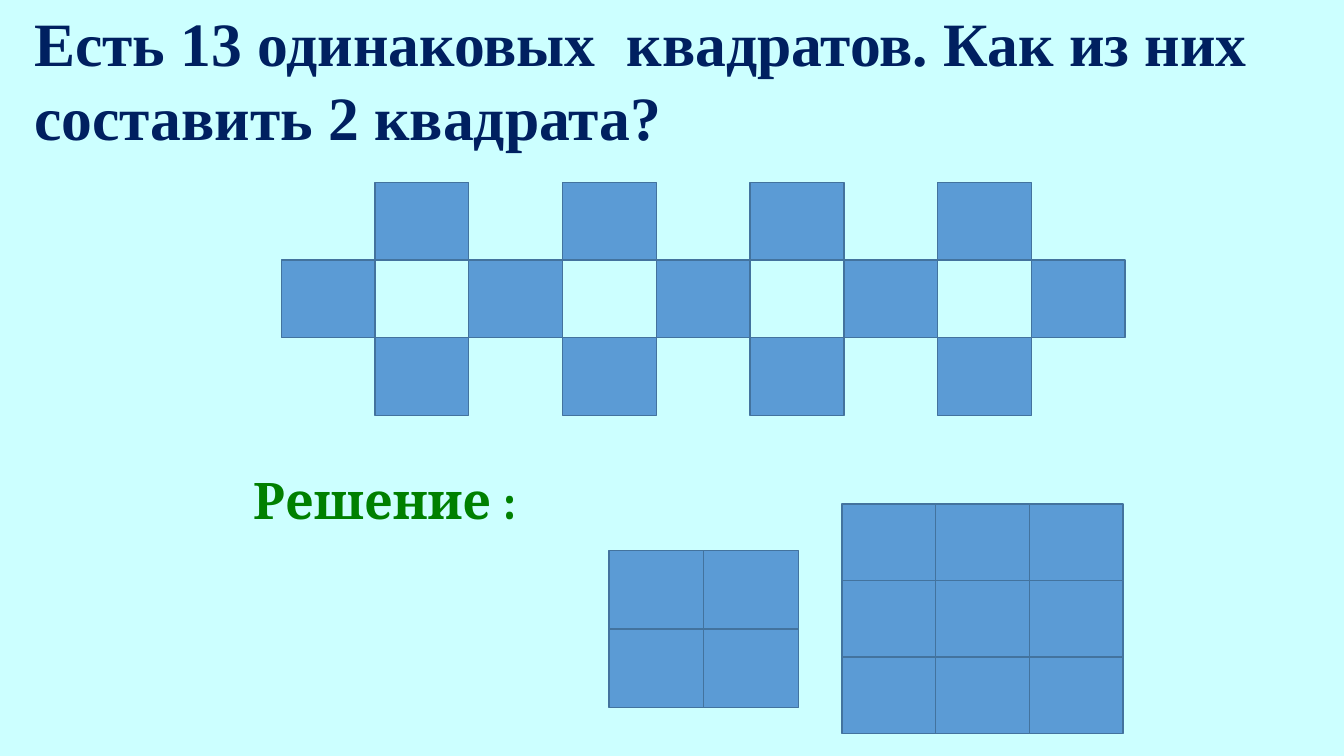
from pptx import Presentation
from pptx.dml.color import RGBColor
from pptx.enum import shapes
from pptx.util import Inches, Pt

BACKGROUND = RGBColor(0xCC, 0xFF, 0xFF)
NAVY = RGBColor(0x00, 0x20, 0x60)
GREEN = RGBColor(0x00, 0x80, 0x00)
SQUARE_FILL = RGBColor(0x5B, 0x9B, 0xD5)
SQUARE_LINE = RGBColor(0x43, 0x73, 0x9E)


def add_text(page, words, left, top, width, height, font, size, color):
    box = page.shapes.add_textbox(
        Inches(left), Inches(top), Inches(width), Inches(height))
    frame = box.text_frame
    frame.word_wrap = True
    frame.text = words
    span = frame.paragraphs[0].runs[0]
    span.font.name = font
    span.font.size = Pt(size)
    span.font.bold = True
    span.font.color.rgb = color
    return frame


def add_square(page, left, top, width, height):
    square = page.shapes.add_shape(
        shapes.MSO_SHAPE.RECTANGLE,
        Inches(left), Inches(top), Inches(width), Inches(height))
    square.shadow.inherit = False
    square.fill.solid()
    square.fill.fore_color.rgb = SQUARE_FILL
    square.line.color.rgb = SQUARE_LINE
    square.line.width = Pt(1)


def add_grid(page, left, top, columns, rows, width, height, checkered=False):
    """Draw touching squares; a checkered grid keeps every other one."""
    for row in range(rows):
        for column in range(columns):
            if checkered and (row + column) % 2 == 0:
                continue
            add_square(page, left + column * width, top + row * height,
                       width, height)


def main():
    deck = Presentation()
    deck.slide_width = Inches(13.33)
    deck.slide_height = Inches(7.5)
    page = deck.slides.add_slide(deck.slide_layouts[6])
    page.background.fill.solid()
    page.background.fill.fore_color.rgb = BACKGROUND

    add_text(page,
             "Есть 13 одинаковых  квадратов. Как из них составить 2 квадрата?",
             0.24, 0, 12.87, 1.58, "Times New Roman", 44, NAVY)
    solution = add_text(page, "Решение :", 2.35, 4.3, 9.2, 1.48,
                        "Cambria", 36, GREEN)
    solution.margin_left = Inches(0.16)
    solution.margin_top = Inches(0.35)

    add_grid(page, 2.79, 1.81, 9, 3, 0.93, 0.77, checkered=True)
    add_grid(page, 6.04, 5.46, 2, 2, 0.94, 0.78)
    add_grid(page, 8.35, 5, 3, 3, 0.93, 0.76)

    deck.save("out.pptx")


if __name__ == "__main__":
    main()
